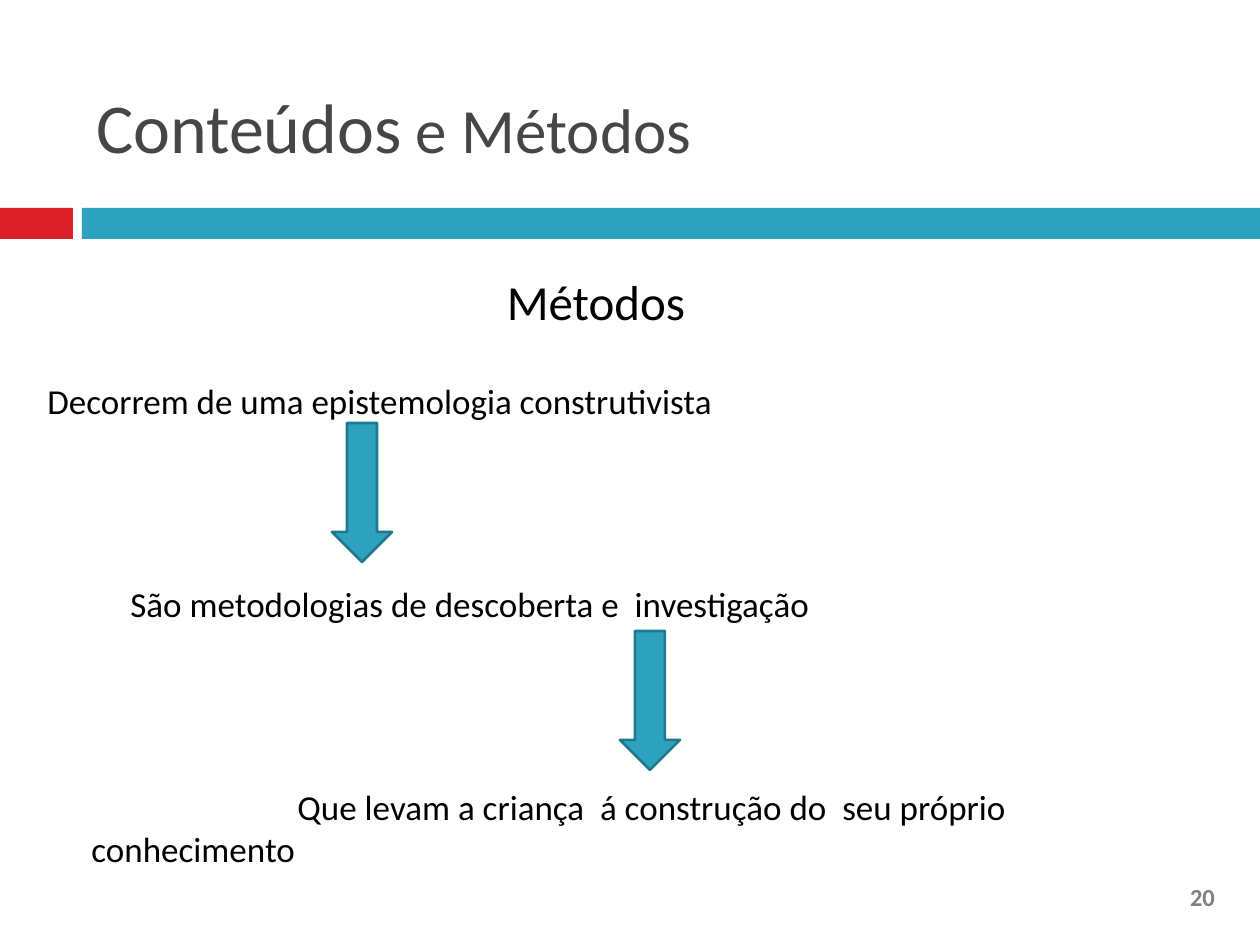
from pptx import Presentation
from pptx.dml.color import RGBColor
from pptx.enum.shapes import MSO_SHAPE
from pptx.enum.text import MSO_ANCHOR, PP_ALIGN
from pptx.util import Emu, Pt

COLORS = {"red": "DA1F28", "teal": "2DA2BF", "edge": "21788D",
          "title": "464646", "text": "000000", "number": "808080"}
SCALE = 914400 / 126  # EMU per px


def px(length):
    return Emu(round(length * SCALE))


def add_text(place, paragraphs, color, align=PP_ALIGN.LEFT, anchor=MSO_ANCHOR.TOP):
    """Each paragraph is a list of (text, font formats) spans."""
    box = page.shapes.add_textbox(*map(px, place))
    frame = box.text_frame
    frame.word_wrap = True
    frame.vertical_anchor = anchor
    for index, spans in enumerate(paragraphs):
        para = frame.paragraphs[0] if index == 0 else frame.add_paragraph()
        para.alignment = align
        for text, formats in spans:
            span = para.add_run()
            span.text = text
            span.font.name = "Calibri"
            span.font.color.rgb = RGBColor.from_string(COLORS[color])
            for name, value in formats.items():
                setattr(span.font, name, value)
    return frame


deck = Presentation()
deck.slide_width, deck.slide_height = px(1260), px(945)
page = deck.slides.add_slide(deck.slide_layouts[6])

# Header band and down arrows
shapes = [
    (MSO_SHAPE.RECTANGLE, (0, 208, 73, 31), "red", None),
    (MSO_SHAPE.RECTANGLE, (82, 208, 1178, 31), "teal", None),
    (MSO_SHAPE.DOWN_ARROW, (332, 423, 60, 139), "teal", "edge"),
    (MSO_SHAPE.DOWN_ARROW, (620, 631, 60, 139), "teal", "edge"),
]
for kind, place, fill, edge in shapes:
    shape = page.shapes.add_shape(kind, *map(px, place))
    shape.shadow.inherit = False
    shape.fill.solid()
    shape.fill.fore_color.rgb = RGBColor.from_string(COLORS[fill])
    if edge:
        shape.line.color.rgb = RGBColor.from_string(COLORS[edge])
        shape.line.width = Pt(1.5)
    else:
        shape.line.fill.background()

# Title and subtitle
add_text((84, 45, 1124, 129),
         [[("Conteúdos", {"size": Pt(40)}), (" e Métodos", {"size": Pt(36)})]],
         "title", anchor=MSO_ANCHOR.BOTTOM)
add_text((323, 265, 546, 72), [[("Métodos", {"size": Pt(28)})]],
         "text", PP_ALIGN.CENTER)

# Three steps, each starting further right
steps = [
    ("Decorrem de uma epistemologia construtivista", -44),
    ("São metodologias de descoberta e  investigação", 39),
    ("Que levam a criança  á construção do  seu próprio conhecimento", 206),
]
body = add_text((35, 373, 1171, 546),
                [[(text, {"size": Pt(20)})] for text, indent in steps], "text")
for index, (para, (text, indent)) in enumerate(zip(body.paragraphs, steps)):
    para.space_before = Pt(92 if index else 0)
    properties = para._p.get_or_add_pPr()
    properties.set("marL", str(px(44)))
    properties.set("indent", str(px(indent)))

# Page number
add_text((1166, 880, 73, 34), [[("20", {"size": Pt(14), "bold": True})]],
         "number", PP_ALIGN.CENTER, MSO_ANCHOR.MIDDLE)

deck.save("out.pptx")
